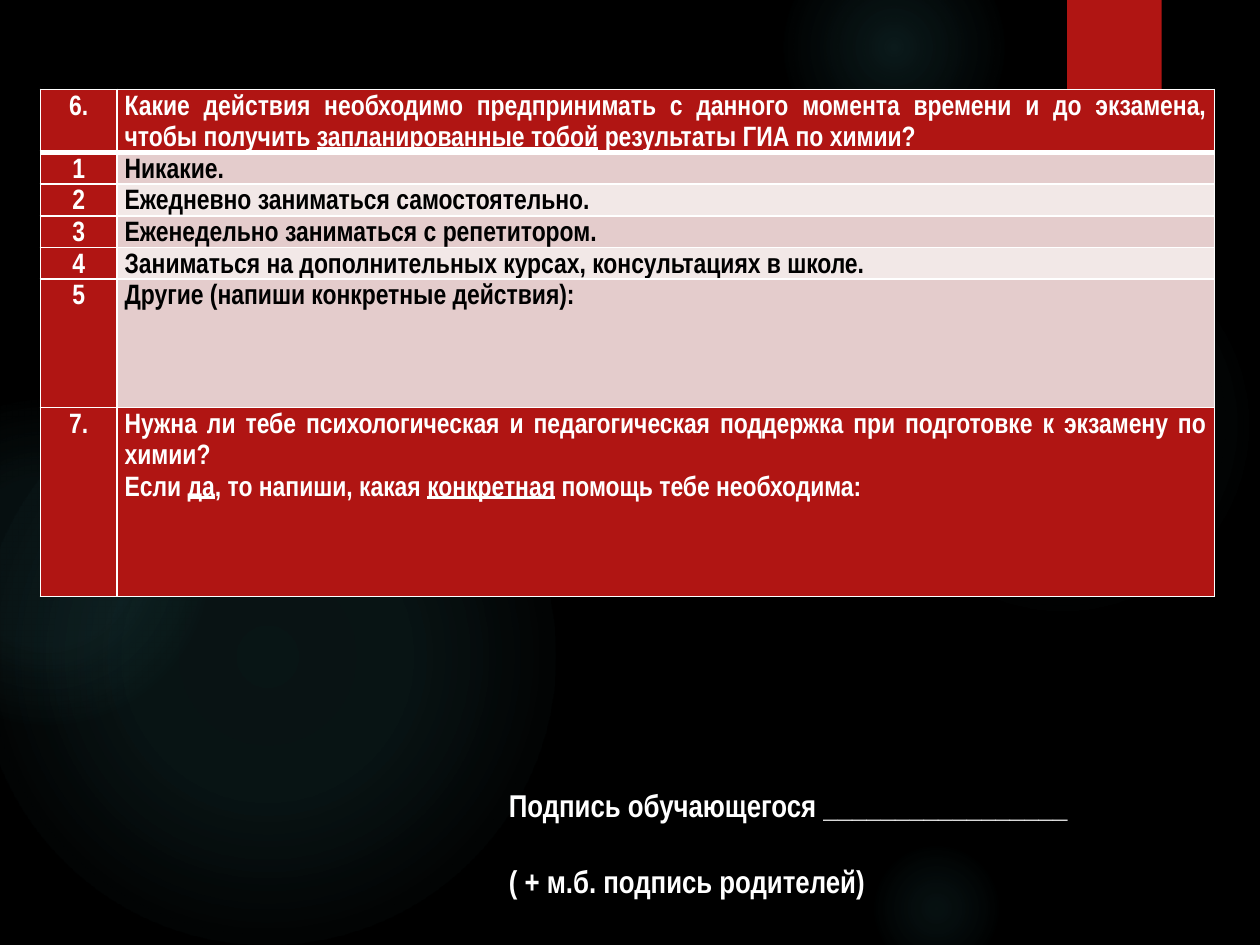
from lxml import etree
from pptx import Presentation
from pptx.dml.color import RGBColor
from pptx.enum.shapes import MSO_SHAPE
from pptx.enum.text import PP_ALIGN
from pptx.oxml import parse_xml
from pptx.util import Inches, Pt

CENTER, JUSTIFY, LEFT = PP_ALIGN.CENTER, PP_ALIGN.JUSTIFY, PP_ALIGN.LEFT
OVAL, RECTANGLE = MSO_SHAPE.OVAL, MSO_SHAPE.RECTANGLE
BLACK = RGBColor(0, 0, 0)
WHITE = RGBColor(255, 255, 255)
RED = RGBColor(0xB0, 0x15, 0x13)
PINK = RGBColor(0xE4, 0xCC, 0xCC)
PALE = RGBColor(0xF2, 0xE8, 0xE7)
TEAL = RGBColor(0x50, 0xB9, 0xC1)
FONT = "Arial Narrow"
DRAWING = "http://schemas.openxmlformats.org/drawingml/2006/main"

# Glows: left, top, diameter, (position %, opacity %) stops
GLOWS = [
    (6.89, 1.83, 3.08, [(0, 7), (36, 6), (69, 0)]),
    (6.22, -0.5, 1.75, [(0, 14), (36, 7), (73, 0)]),
    (6.89, 6.67, 1.08, [(0, 9), (36, 5), (66, 0)]),
    (-0.17, 2.92, 4.58, [(0, 11), (36, 10), (75, 0)]),
    (-0.92, 3.17, 2.58, [(0, 8), (36, 8), (72, 0)]),
]
# Rows: number, paragraphs (underscores mark underlined spans), height, fill
ROWS = [
    ("6.", ["Какие действия необходимо предпринимать с данного момента времени "
            "и до экзамена, чтобы получить _запланированные тобой_ результаты "
            "ГИА по химии?"], 0.5, RED),
    ("1", ["Никакие."], 0.25, PINK),
    ("2", ["Ежедневно заниматься самостоятельно."], 0.25, PALE),
    ("3", ["Еженедельно заниматься с репетитором."], 0.25, PINK),
    ("4", ["Заниматься на дополнительных курсах, консультациях в школе."], 0.25, PALE),
    ("5", ["Другие (напиши конкретные действия):"], 1.02, PINK),
    ("7.", ["Нужна ли тебе психологическая и педагогическая поддержка при "
            "подготовке к экзамену по химии?",
            "Если _да_, то напиши, какая _конкретная_ помощь тебе необходима:"],
     1.5, RED),
]
COLUMNS = [0.61, 8.71]
SIGNATURES = ["Подпись обучающегося " + "_" * 17, "( + м.б. подпись родителей)"]


def write(frame, paragraphs, size=16, color=WHITE, align=LEFT, spacing=1.0,
          gap=0, marked=False):
    frame.word_wrap = True
    for index, text in enumerate(paragraphs):
        para = frame.add_paragraph() if index else frame.paragraphs[0]
        para.alignment, para.line_spacing = align, spacing
        para.space_before = Pt(gap if index else 0)
        for order, part in enumerate(text.split("_") if marked else [text]):
            span = para.add_run()
            span.text = part
            font = span.font
            font.name, font.size, font.bold = FONT, Pt(size), True
            font.color.rgb = color
            if order % 2:
                font.underline = True


def add_plain(kind, left, top, width, height):
    shape = page.shapes.add_shape(kind, *map(Inches, (left, top, width, height)))
    shape.shadow.inherit = False
    shape.line.fill.background()
    return shape


def glow_fill(shape, stops):
    shape.fill.background()
    marks = "".join(
        f'<a:gs pos="{pos * 1000}"><a:srgbClr val="{TEAL}">'
        f'<a:alpha val="{opacity * 1000}"/></a:srgbClr></a:gs>'
        for pos, opacity in stops)
    gradient = parse_xml(
        f'<a:gradFill xmlns:a="{DRAWING}"><a:gsLst>{marks}</a:gsLst>'
        '<a:path path="circle"><a:fillToRect l="50000" t="50000" r="50000" '
        'b="50000"/></a:path></a:gradFill>')
    properties = shape._element.spPr
    properties.replace(properties.find(f"{{{DRAWING}}}noFill"), gradient)


def set_borders(cell, **widths):
    properties = cell._tc.get_or_add_tcPr()
    for index, side in enumerate("LRTB"):
        line = etree.Element(f"{{{DRAWING}}}ln{side}", w=str(Pt(widths.get(side, 1))))
        fill = etree.SubElement(line, f"{{{DRAWING}}}solidFill")
        etree.SubElement(fill, f"{{{DRAWING}}}srgbClr", val=str(WHITE))
        properties.insert(index, line)


deck = Presentation()
deck.slide_width, deck.slide_height = Inches(10), Inches(7.5)
page = deck.slides.add_slide(deck.slide_layouts[6])
page.background.fill.solid()
page.background.fill.fore_color.rgb = BLACK

# Background glows and red tab
for left, top, diameter, stops in GLOWS:
    glow_fill(add_plain(OVAL, left, top, diameter, diameter), stops)
tab = add_plain(RECTANGLE, 8.47, 0, 0.75, 1.2)
tab.fill.solid()
tab.fill.fore_color.rgb = RED

# Questionnaire table
total_height = sum(row[2] for row in ROWS)
table = page.shapes.add_table(
    len(ROWS), len(COLUMNS), Inches(0.32), Inches(0.71),
    Inches(sum(COLUMNS)), Inches(total_height)).table
for column, width in zip(table.columns, COLUMNS):
    column.width = Inches(width)
for index, (number, answer, height, fill) in enumerate(ROWS):
    table.rows[index].height = Inches(height)
    answer_color = WHITE if fill == RED else BLACK
    parts = [([number], RED, WHITE, CENTER), (answer, fill, answer_color, JUSTIFY)]
    for cell, (texts, back, color, align) in zip(table.rows[index].cells, parts):
        cell.margin_left = cell.margin_right = Inches(0.06)
        cell.margin_top = cell.margin_bottom = 0
        cell.fill.solid()
        cell.fill.fore_color.rgb = back
        set_borders(cell, T=3 if index == 1 else 1, B=3 if index == 0 else 1)
        write(cell.text_frame, texts, color=color, align=align, spacing=1.2,
              marked=True)

# Signature lines
box = page.shapes.add_textbox(Inches(3.94), Inches(6.19), Inches(5.63), Inches(1.01))
write(box.text_frame, SIGNATURES, size=18, gap=22)

deck.save("out.pptx")
